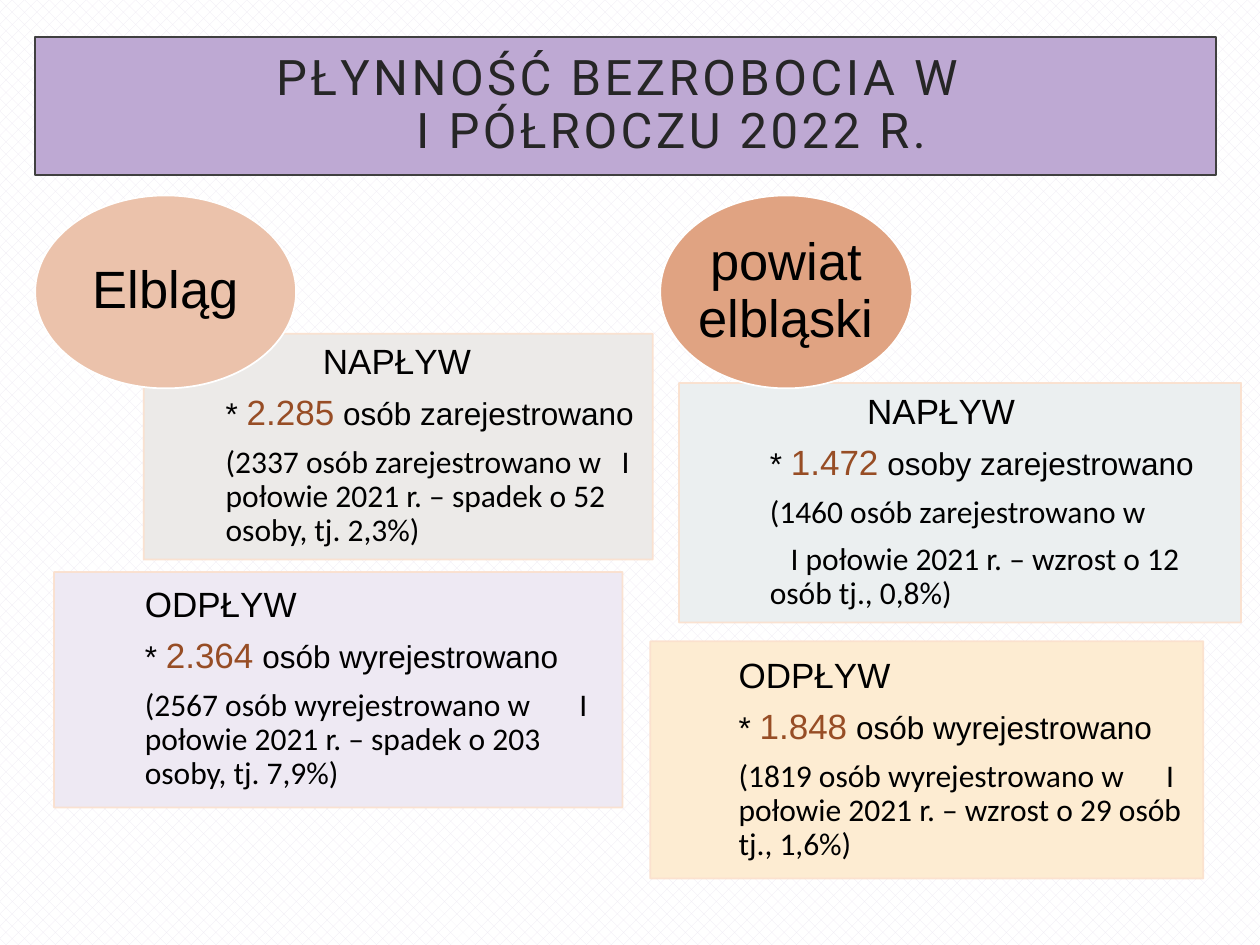
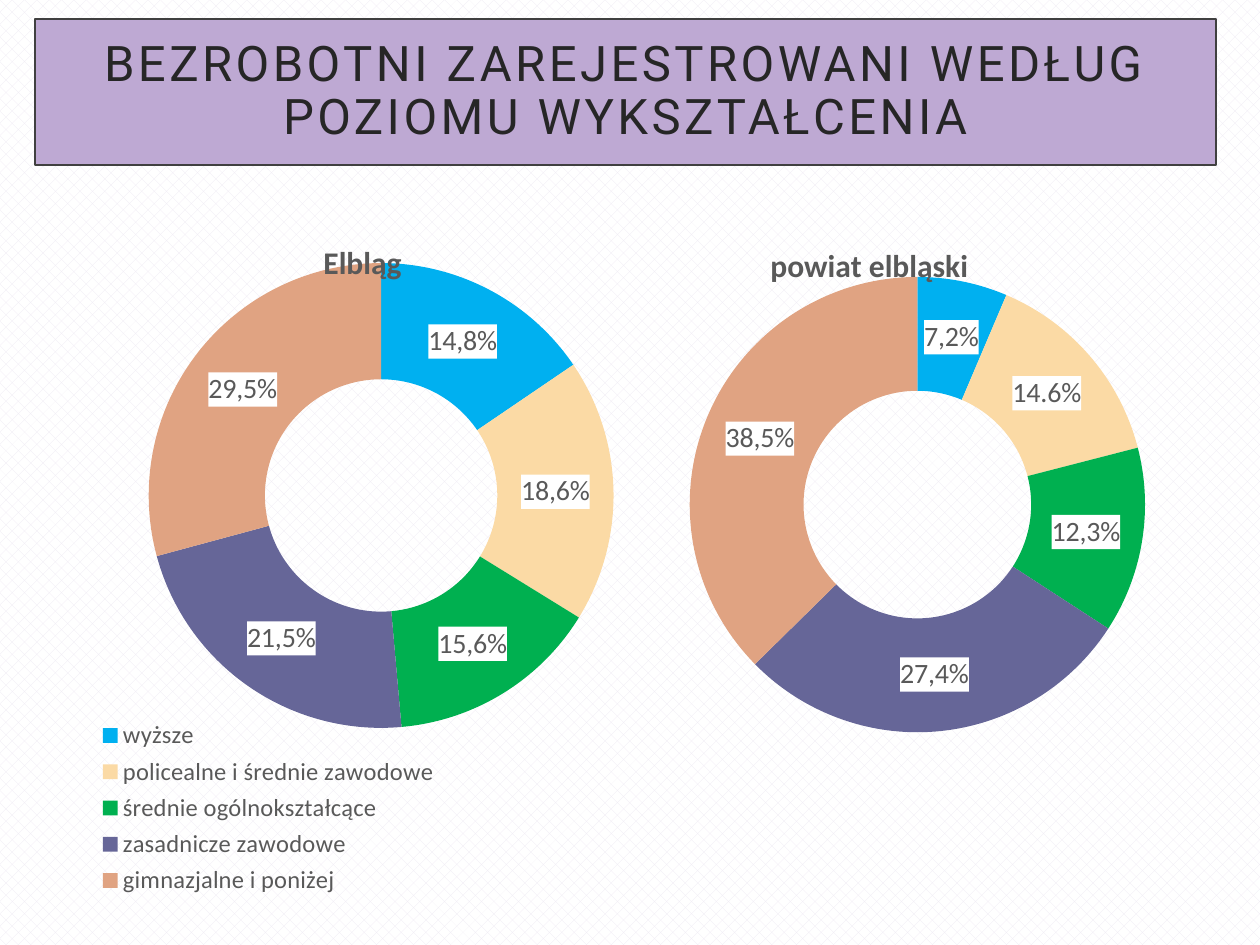
from dataclasses import dataclass

from lxml import etree
from pptx import Presentation
from pptx.chart.data import CategoryChartData
from pptx.dml.color import RGBColor
from pptx.enum.chart import XL_CHART_TYPE as ChartType, XL_LEGEND_POSITION as LegendPos
from pptx.enum.dml import MSO_PATTERN as Pattern
from pptx.enum.shapes import MSO_SHAPE as Shape
from pptx.enum.text import MSO_ANCHOR as Anchor, PP_ALIGN as Align
from pptx.oxml import parse_xml
from pptx.oxml.ns import nsdecls, qn
from pptx.util import Cm, Pt


@dataclass(frozen=True)
class Theme:
    paper: str = "FFFFFF"
    weave: str = "EEE9F3"
    band: str = "BEA9D3"
    band_line: str = "404040"
    title: str = "262626"
    text: str = "000000"
    accent: str = "974D25"
    box_line: str = "FBE0CD"
    chart_text: str = "595959"
    slices: tuple = ("00B0F0", "FBDAA5", "00B050", "666698", "E0A382")
    title_font: str = "Roboto"
    head_font: str = "Arial"
    body_font: str = "Calibri"
    title_size: int = 28
    name_size: int = 30
    head_size: int = 20
    body_size: int = 18
    label_size: int = 16
    legend_size: int = 14


T = Theme()


def rgb(code):
    return RGBColor.from_string(code)


def set_values(obj, **values):
    for name, value in values.items():
        setattr(obj, name, value)


def set_font(font, name, size, color, **more):
    set_values(font, name=name, size=Pt(size), **more)
    font.color.rgb = rgb(color)


def add_slide(prs):
    s = prs.slides.add_slide(prs.slide_layouts[6])
    fill = s.background.fill
    fill.patterned()
    fill.pattern = Pattern.PERCENT_30
    fill.fore_color.rgb, fill.back_color.rgb = rgb(T.weave), rgb(T.paper)
    return s


def add_panel(s, kind, at, fill, line, insets=(0, 0, 0, 0)):
    """Filled, outlined shape; at and insets (left, top, right, bottom) are in cm."""
    sp = s.shapes.add_shape(kind, *map(Cm, at))
    sp.shadow.inherit = False
    sp.fill.solid()
    sp.fill.fore_color.rgb = rgb(fill)
    sp.line.color.rgb = rgb(line)
    sp.line.width = Pt(1)
    sides = ("margin_left", "margin_top", "margin_right", "margin_bottom")
    set_values(sp.text_frame, word_wrap=True, vertical_anchor=Anchor.MIDDLE,
               **dict(zip(sides, map(Cm, insets))))
    return sp


def add_paragraph(tf, runs, align=Align.LEFT, after=7.5, tab=None, **indents):
    """Runs are (text, font, size, colour); indents are marL, marR or indent in cm."""
    p = tf.paragraphs[0] if not tf.paragraphs[0].runs else tf.add_paragraph()
    set_values(p, alignment=align, line_spacing=0.9,
               space_before=Pt(0), space_after=Pt(after))
    pPr = p._p.get_or_add_pPr()
    for name, value in indents.items():
        pPr.set(name, str(Cm(value)))
    if tab:
        tabs = etree.SubElement(pPr, qn("a:tabLst"))
        etree.SubElement(tabs, qn("a:tab"), pos=str(Cm(tab)), algn="l")
    for text, *look in runs:
        r = p.add_run()
        r.text = text
        set_font(r.font, *look)
    return p


def add_title(s, top, height, lines):
    """Title band; each line is (text, indents)."""
    sp = add_panel(s, Shape.RECTANGLE, (0.71, top, 23.8, height),
                   T.band, T.band_line, (0.51,) * 4)
    for text, indents in lines:
        p = add_paragraph(sp.text_frame, [(text, T.title_font, T.title_size, T.title)],
                          Align.CENTER, after=0, **indents)
        for r in p.runs:
            r.font._element.set("spc", "200")


def add_name(s, left, width, text, fill):
    sp = add_panel(s, Shape.OVAL, (left, 3.94, width, 3.89), fill, T.paper)
    add_paragraph(sp.text_frame, [(text, T.head_font, T.name_size, T.text)], Align.CENTER)


def add_flow(s, at, fill, insets, head, head_indent, count, action, notes):
    """Box with a heading, a highlighted count and notes given as (text, layout)."""
    sp = add_panel(s, Shape.RECTANGLE, at, fill, T.box_line, insets)
    color = sp.line._ln.find(".//" + qn("a:srgbClr"))
    etree.SubElement(color, qn("a:alpha"), val="90000")
    tf = sp.text_frame
    add_paragraph(tf, [(head, T.head_font, T.head_size, T.text)], marL=head_indent)
    add_paragraph(tf, [("* ", T.head_font, T.body_size, T.text),
                       (count, T.head_font, T.head_size, T.accent),
                       (" " + action, T.head_font, T.body_size, T.text)])
    for text, layout in notes:
        add_paragraph(tf, [(text, T.body_font, T.body_size, T.text)], **layout)


def place(el, index, x, y, w=None, h=None, inner=False):
    """Put a manual layout, in fractions of the chart, at a child index of el."""
    for old in el.findall(qn("c:layout")):
        el.remove(old)
    layout = etree.Element(qn("c:layout"))
    manual = etree.SubElement(layout, qn("c:manualLayout"))
    values = [("layoutTarget", "inner" if inner else None), ("xMode", "edge"),
              ("yMode", "edge"), ("x", x), ("y", y), ("w", w), ("h", h)]
    for tag, value in values:
        if value is not None:
            etree.SubElement(manual, qn("c:" + tag), val=str(value))
    el.insert(index, layout)


def chart_fill(fill):
    return parse_xml(f'<c:spPr {nsdecls("c", "a")}>{fill}</c:spPr>')


def add_labels(series, texts):
    """Percent labels on white; a text replaces the computed one."""
    labels = series.data_labels
    set_values(labels, show_percentage=True, show_value=False,
               number_format="0.0%", number_format_is_linked=False)
    look = (T.body_font, T.label_size, T.chart_text)
    set_font(labels.font, *look)
    for i, text in enumerate(texts):
        if text:
            p = series.points[i].data_label.text_frame.paragraphs[0]
            r = p.add_run()
            r.text = text
            set_font(r.font, *look)
    white = f'<a:solidFill><a:srgbClr val="{T.paper}"/></a:solidFill>'
    for el in series._element.xpath("c:dLbls/c:numFmt | c:dLbls/c:dLbl/c:tx"):
        el.addnext(chart_fill(white))


def add_doughnut(s, at, title, title_at, plot_at, categories, values, texts):
    data = CategoryChartData()
    data.categories = categories
    data.add_series("Series 1", values)
    chart = s.shapes.add_chart(ChartType.DOUGHNUT, *map(Cm, at), data).chart
    set_font(chart.font, T.body_font, 10, T.text)
    chart.has_legend = False
    root = chart._chartSpace
    root.find(qn("c:chart")).addnext(chart_fill("<a:noFill/><a:ln><a:noFill/></a:ln>"))

    r = chart.chart_title.text_frame.paragraphs[0].add_run()
    r.text = title
    set_font(r.font, T.body_font, T.label_size + 2, T.chart_text, bold=True)
    place(chart.chart_title._element, 1, *title_at)
    place(root.find(".//" + qn("c:plotArea")), 0, *plot_at, inner=True)

    plot = chart.plots[0]
    plot.vary_by_categories = True
    series = plot.series[0]
    for i, color in enumerate(T.slices):
        fill = series.points[i].format.fill
        fill.solid()
        fill.fore_color.rgb = rgb(color)
    add_labels(series, texts)
    return chart


def add_legend(chart, *at):
    chart.has_legend = True
    set_values(chart.legend, position=LegendPos.TOP, include_in_layout=False)
    set_font(chart.legend.font, T.body_font, T.legend_size, T.chart_text)
    place(chart.legend._element, 1, *at)


def build_flow_slide(prs):
    s = add_slide(prs)
    add_title(s, 0.74, 2.79, [("PŁYNNOŚĆ BEZROBOCIA W", {"marR": 0.33}),
                              ("I PÓŁROCZU 2022 R.", {"marL": 2.18})])
    add_flow(s, (2.9, 6.73, 10.26, 4.55), "ECEAE8", (1.65, 0.3, 0.3, 0.3),
             "NAPŁYW", 1.96, "2.285", "osób zarejestrowano",
             [("(2337 osób zarejestrowano w\tI połowie 2021 r. – spadek o 52 osoby, tj. 2,3%)",
               {"tab": 7.98})])
    add_flow(s, (1.09, 11.53, 11.46, 4.75), "EEE9F3", (1.83, 0.41, 0.41, 0.41),
             "ODPŁYW", 0, "2.364", "osób wyrejestrowano",
             [("(2567 osób wyrejestrowano w\tI połowie 2021 r. – spadek o 203 osoby, tj. 7,9%)",
               {"tab": 8.76})])
    add_name(s, 0.71, 5.26, "Elbląg", "EBC2AB")
    add_flow(s, (13.69, 7.72, 11.33, 4.83), "EBEFF0", (1.83, 0.3, 0.3, 0.3),
             "NAPŁYW", 1.96, "1.472", "osoby zarejestrowano",
             [("(1460 osób zarejestrowano w", {}),
              ("I połowie 2021 r. – wzrost o 12 osób tj., 0,8%)", {"indent": 0.42})])
    add_flow(s, (13.11, 12.93, 11.15, 4.78), "FDECD2", (1.78, 0.41, 0.41, 0.41),
             "ODPŁYW", 0, "1.848", "osób wyrejestrowano",
             [("(1819 osób wyrejestrowano w\tI połowie 2021 r. – wzrost o 29 osób tj., 1,6%)",
               {"tab": 8.62})])
    add_name(s, 13.31, 5.08, "powiat elbląski", "E0A382")


def build_education_slide(prs):
    s = add_slide(prs)
    add_title(s, 0.38, 2.95,
              [("BEZROBOTNI ZAREJESTROWANI WEDŁUG POZIOMU WYKSZTAŁCENIA", {})])
    levels = ("wyższe", "policealne i średnie zawodowe", "średnie ogólnokształcące",
              "zasadnicze zawodowe", "gimnazjalne i poniżej")
    city = add_doughnut(s, (0.3, 4.32, 14.2, 14), "Elbląg", (0.43, 0.03),
                        (0.19, 0.07, 0.66, 0.67), levels,
                        (15.5, 18.3, 14.8, 22.2, 29.2),
                        ("14,8%", "18,6%", "15,6%", "21,5%", "29,5%"))
    add_legend(city, 0.1, 0.72, 0.52, 0.27)
    add_doughnut(s, (12.5, 4.11, 10.8, 11.23), "powiat elbląski", (0.27, 0.06),
                 (0.13, 0.13, 0.85, 0.82), ("1", "2", "3", "4", "5"),
                 (6.4, 14.6, 13.2, 28.5, 37.4),
                 ("7,2%", None, "12,3%", "27,4%", "38,5%"))


def main():
    prs = Presentation()
    prs.slide_width, prs.slide_height = Cm(25.4), Cm(19.05)
    build_flow_slide(prs)
    build_education_slide(prs)
    prs.save("out.pptx")


if __name__ == "__main__":
    main()
